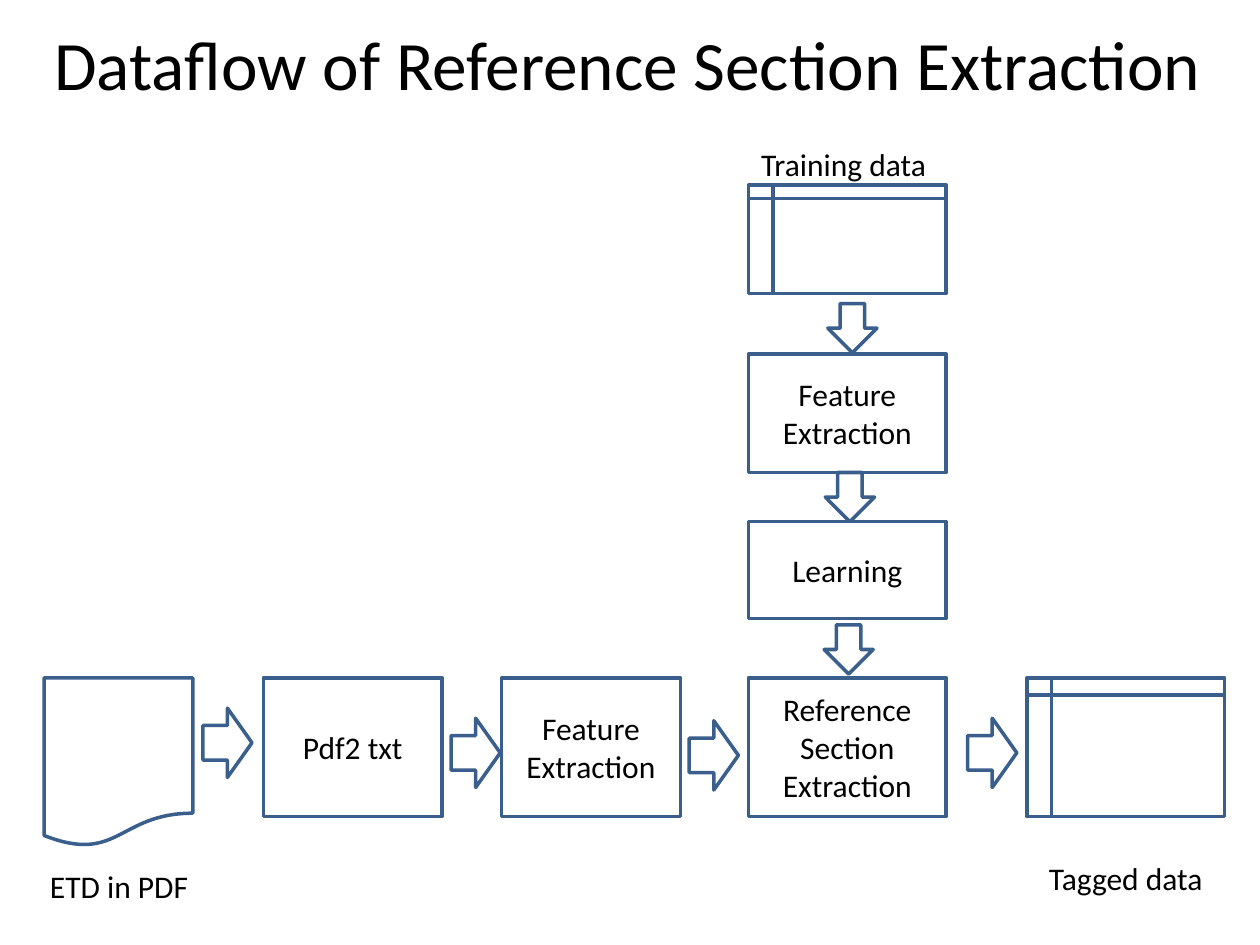
from dataclasses import dataclass

from pptx import Presentation
from pptx.dml.color import RGBColor
from pptx.enum.shapes import MSO_SHAPE
from pptx.enum.text import MSO_ANCHOR, PP_ALIGN
from pptx.util import Inches, Pt

RECT = MSO_SHAPE.RECTANGLE
PAGE = MSO_SHAPE.FLOWCHART_DOCUMENT
STORE = MSO_SHAPE.FLOWCHART_INTERNAL_STORAGE
DOWN = MSO_SHAPE.DOWN_ARROW
RIGHT = MSO_SHAPE.RIGHT_ARROW
CENTER = PP_ALIGN.CENTER
MIDDLE = MSO_ANCHOR.MIDDLE


@dataclass(frozen=True)
class Theme:
    font: str = "Calibri"
    ink: RGBColor = RGBColor(0, 0, 0)
    edge: RGBColor = RGBColor(0x3A, 0x5F, 0x8C)
    line: float = 2
    title: float = 39.6
    body: float = 18


THEME = Theme()


def write(frame, text, size=THEME.body, color=THEME.ink):
    frame.word_wrap = True
    frame.vertical_anchor = MIDDLE
    frame.text = text
    for para in frame.paragraphs:
        para.alignment = CENTER
        for run in para.runs:
            run.font.name = THEME.font
            run.font.size = Pt(size)
            run.font.color.rgb = color


def label(slide, text, box, **style):
    area = slide.shapes.add_textbox(*map(Inches, box))
    write(area.text_frame, text, **style)


def node(slide, kind, box, text=""):
    """Add an outlined shape without fill, with centred text if given."""
    shape = slide.shapes.add_shape(kind, *map(Inches, box))
    shape.shadow.inherit = False
    shape.fill.background()
    shape.line.color.rgb = THEME.edge
    shape.line.width = Pt(THEME.line)
    if text:
        write(shape.text_frame, text)


def train(slide, left, top, width):
    """Stack the training steps downwards, each followed by an arrow."""
    label(slide, "Training data", (left - 0.15, top - 0.4, width + 0.24, 0.47))
    # kind, text, top offset, height, arrow left and top offsets
    steps = [
        (STORE, "", 0, 0.86, 0.63, 0.94),
        (RECT, "Feature\nExtraction", 1.34, 0.94, 0.61, 2.28),
        (RECT, "Learning", 2.67, 0.77, 0.6, 3.49),
    ]
    for kind, text, drop, height, dx, dy in steps:
        node(slide, kind, (left, top + drop, width, height), text)
        node(slide, DOWN, (left + dx, top + dy, 0.39, 0.39))


def extract(slide, left, top, height):
    """Lay the extraction steps in a row, joined by arrows."""
    # kind, text, left offset, width, height
    steps = [
        (PAGE, "", 0, 1.18, 1.34),
        (RECT, "Pdf2 txt", 1.74, 1.42, height),
        (RECT, "Feature\vExtraction", 3.63, 1.42, height),
        (RECT, "Reference Section\vExtraction", 5.59, 1.57, height),
        (STORE, "", 7.8, 1.57, height),
    ]
    for kind, text, shift, width, tall in steps:
        node(slide, kind, (left + shift, top, width, tall), text)
    for dx, dy in [(1.26, 0.24), (3.23, 0.32), (5.12, 0.34), (7.33, 0.32)]:
        node(slide, RIGHT, (left + dx, top + dy, 0.39, 0.55))
    label(slide, "ETD in PDF", (left - 0.23, top + 1.42, 1.65, 0.47))
    label(slide, "Tagged data", (left + 7.8, top + 1.36, 1.57, 0.45))


def main():
    deck = Presentation()
    deck.slide_width, deck.slide_height = Inches(10), Inches(7.5)
    slide = deck.slides.add_slide(deck.slide_layouts[6])
    label(slide, "Dataflow of Reference Section Extraction",
          (0.12, 0.06, 9.72, 0.87), size=THEME.title)
    train(slide, 5.94, 1.47, 1.57)
    extract(slide, 0.35, 5.38, 1.1)
    deck.save("out.pptx")


if __name__ == "__main__":
    main()
